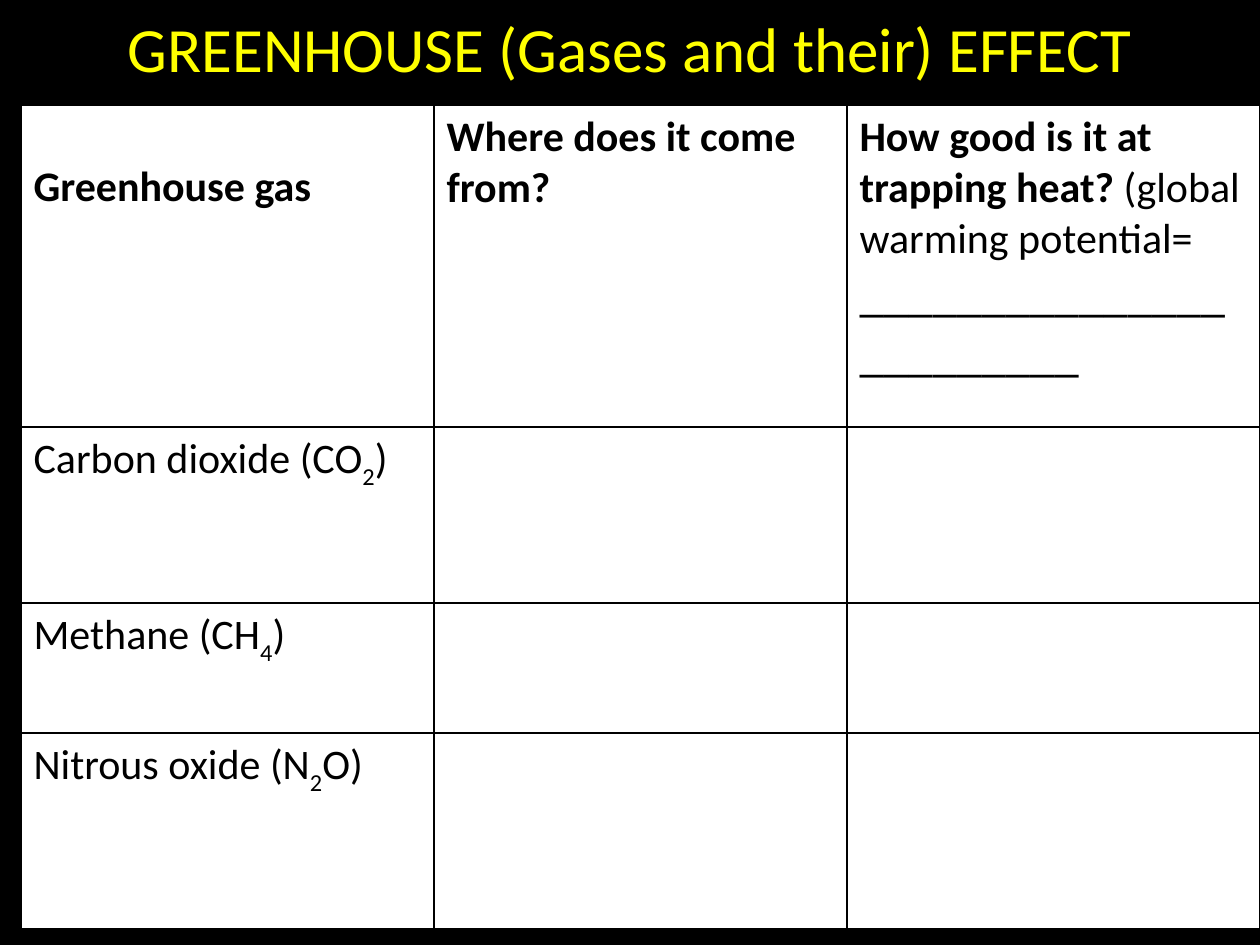
"""Build a worksheet slide on greenhouse gases, with a table to fill in."""
from lxml.etree import SubElement
from pptx import Presentation
from pptx.dml.color import RGBColor
from pptx.enum.text import MSO_ANCHOR, MSO_AUTO_SIZE, PP_ALIGN
from pptx.oxml.ns import qn
from pptx.util import Pt

PX = 914400 / 126
COLORS = {"black": "000000", "white": "FFFFFF", "yellow": "FFFF00"}


def add_text(paragraph, text, size=24, color="black", bold=False, baseline=0):
    run = paragraph.add_run()
    run.text = text
    run.font.name = "Calibri"
    run.font.size = Pt(size)
    run.font.bold = bold
    run.font.color.rgb = RGBColor.from_string(COLORS[color])
    if baseline:
        run.font._element.set("baseline", str(baseline * 1000))


def add_borders(cell):
    properties = cell._tc.get_or_add_tcPr()
    for position, side in enumerate(("lnL", "lnR", "lnT", "lnB")):
        line = SubElement(properties, qn(f"a:{side}"), w=str(Pt(1)))
        properties.insert(position, line)
        fill = SubElement(line, qn("a:solidFill"))
        SubElement(fill, qn("a:srgbClr"), val=COLORS["black"])


presentation = Presentation()
presentation.slide_width = round(1260 * PX)
presentation.slide_height = round(945 * PX)
slide = presentation.slides.add_slide(presentation.slide_layouts[5])
slide.background.fill.solid()
slide.background.fill.fore_color.rgb = RGBColor.from_string(COLORS["black"])

title = slide.shapes.title
title.left, title.top = 0, 0
title.width, title.height = round(1260 * PX), round(95 * PX)
title.text_frame.auto_size = MSO_AUTO_SIZE.NONE
title.text_frame.vertical_anchor = MSO_ANCHOR.MIDDLE
heading = title.text_frame.paragraphs[0]
heading.alignment = PP_ALIGN.CENTER
add_text(heading, "GREENHOUSE (Gases and their) EFFECT", size=36, color="yellow")

row_heights = [322, 176, 130, 196]
column_width = 413
gases = slide.shapes.add_table(
    len(row_heights), 3, round(21 * PX), round(105 * PX),
    round(3 * column_width * PX), round(sum(row_heights) * PX),
).table
for row, height in zip(gases.rows, row_heights):
    row.height = round(height * PX)
for column in gases.columns:
    column.width = round(column_width * PX)
for cell in gases.iter_cells():
    cell.fill.solid()
    cell.fill.fore_color.rgb = RGBColor.from_string(COLORS["white"])
    add_borders(cell)

questions = ["Greenhouse gas", "Where does it come from?", "How good is it at trapping heat? "]
for column, question in enumerate(questions):
    add_text(gases.cell(0, column).text_frame.paragraphs[0], question, bold=True)
gases.cell(0, 0).margin_top = round(57 * PX)
potential = gases.cell(0, 2).text_frame.paragraphs[0]
add_text(potential, "(global warming potential= ")
add_text(potential, "_" * 24, size=28)

formulas = [
    ("Carbon dioxide (CO", "2", ")"),
    ("Methane (CH", "4", ")"),
    ("Nitrous oxide (N", "2", "O)"),
]
for row, (name, count, ending) in enumerate(formulas, start=1):
    formula = gases.cell(row, 0).text_frame.paragraphs[0]
    add_text(formula, name)
    add_text(formula, count, baseline=-30)
    add_text(formula, ending)

presentation.save("out.pptx")
